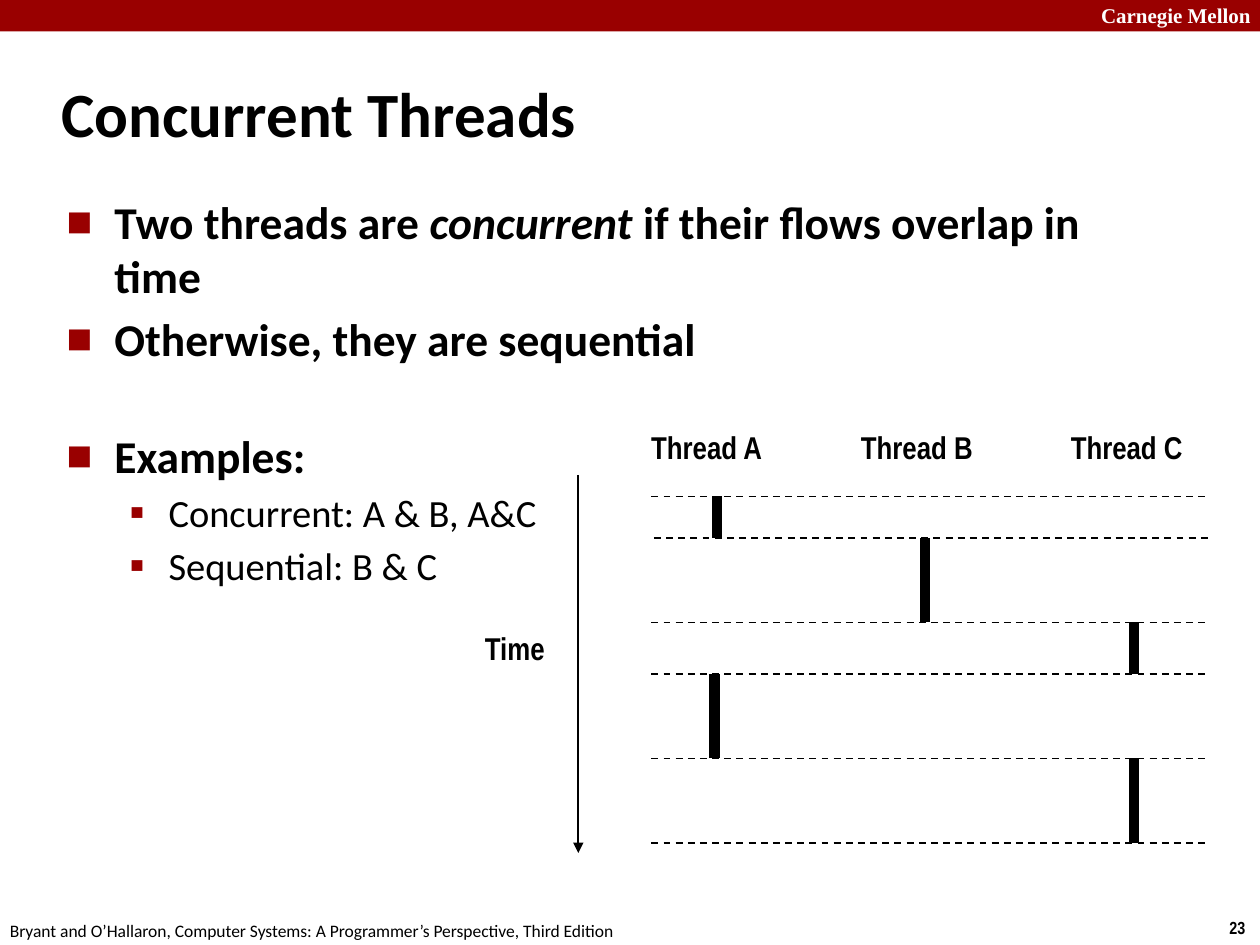
from lxml import etree
from pptx import Presentation
from pptx.dml.color import RGBColor
from pptx.enum.dml import MSO_LINE_DASH_STYLE as DASH
from pptx.enum.shapes import MSO_CONNECTOR, MSO_SHAPE
from pptx.enum.text import MSO_ANCHOR as ANCHOR
from pptx.oxml.ns import qn
from pptx.util import Inches, Pt

BLACK, WHITE, RED = "000000", "FFFFFF", "990000"


def color(hex_code):
    return RGBColor.from_string(hex_code)


def add_text(paragraph, text, *, font="Calibri", size=18, ink=BLACK, bold=False, italic=False):
    run = paragraph.add_run()
    run.text = text
    run.font.name, run.font.size = font, Pt(size)
    run.font.bold, run.font.italic = bold, italic
    run.font.color.rgb = color(ink)


def add_bullet(paragraph, symbol, percent, indent, hanging):
    props = paragraph._p.get_or_add_pPr()
    props.set("marL", str(Inches(indent)))
    props.set("indent", str(-Inches(hanging)))
    bullet_color = etree.SubElement(props, qn("a:buClr"))
    etree.SubElement(bullet_color, qn("a:srgbClr"), val=RED)
    etree.SubElement(props, qn("a:buSzPct"), val=str(percent * 1000))
    etree.SubElement(props, qn("a:buFont"), typeface="Calibri")
    etree.SubElement(props, qn("a:buChar"), char=symbol)


class SlideBuilder:
    label_style = dict(font="Arial Narrow", size=18, bold=True)

    def __init__(self, slide):
        self.shapes = slide.shapes

    def bar(self, left, top, width, height, fill):
        shape = self.shapes.add_shape(
            MSO_SHAPE.RECTANGLE, *map(Inches, (left, top, width, height)))
        shape.shadow.inherit = False
        shape.fill.solid()
        shape.fill.fore_color.rgb = color(fill)
        shape.line.fill.background()

    def frame(self, left, top, width, height, wrap=True, anchor=ANCHOR.TOP):
        box = self.shapes.add_textbox(*map(Inches, (left, top, width, height)))
        box.text_frame.word_wrap = wrap
        box.text_frame.vertical_anchor = anchor
        return box.text_frame

    def label(self, text, left, top, width, height, wrap=False, anchor=ANCHOR.TOP, **style):
        frame = self.frame(left, top, width, height, wrap, anchor)
        add_text(frame.paragraphs[0], text, **(style or self.label_style))

    def bullets(self, left, top, width, height, items):
        frame = self.frame(left, top, width, height)
        for number, (level, gap, runs) in enumerate(items):
            paragraph = frame.add_paragraph() if number else frame.paragraphs[0]
            paragraph.level = level
            paragraph.space_before = Pt(gap)
            if level:
                add_bullet(paragraph, "▪", 110, 0.81, 0.31)
            else:
                add_bullet(paragraph, "■", 60, 0.38, 0.38)
            for text, italic in runs:
                add_text(paragraph, text, size=22 if level else 26,
                         bold=level == 0, italic=italic)

    def line(self, x1, y1, x2, y2, width=1, dash=None, arrow=False):
        connector = self.shapes.add_connector(
            MSO_CONNECTOR.STRAIGHT, *map(Inches, (x1, y1, x2, y2)))
        connector.line.color.rgb = color(BLACK)
        connector.line.width = Pt(width)
        if dash:
            connector.line.dash_style = dash
        if arrow:
            etree.SubElement(connector.line._get_or_add_ln(), qn("a:tailEnd"), type="triangle")
        etree.SubElement(connector._element.spPr, qn("a:effectLst"))


def main():
    deck = Presentation()
    deck.slide_width, deck.slide_height = Inches(10), Inches(7.5)
    page = SlideBuilder(deck.slides.add_slide(deck.slide_layouts[6]))

    # Header and footer
    page.bar(0, 0, 10, 0.25, RED)
    page.label("Carnegie Mellon", 8.64, -0.03, 1.43, 0.3, wrap=True,
               font="Times New Roman", size=12, ink=WHITE, bold=True)
    page.label("23", 9.66, 7.23, 0.34, 0.27, font="Arial Narrow", size=10, bold=True)
    page.label("Bryant and O’Hallaron, Computer Systems: A Programmer’s Perspective, Third Edition",
               -0.02, 7.25, 5.08, 0.27, size=10)

    # Title and definitions
    page.label("Concurrent Threads", 0.39, 0.48, 8.3, 0.83, wrap=True,
               anchor=ANCHOR.MIDDLE, size=36, bold=True)
    page.bullets(0.43, 1.49, 8.64, 5.44, [
        (0, 0, [("Two threads are ", False), ("concurrent", True),
                (" if their flows overlap in time", False)]),
        (0, 4.5, [("Otherwise, they are sequential", False)]),
        (0, 35.5, [("Examples:", False)]),
        (1, 4, [("Concurrent: A & B, A&C", False)]),
        (1, 4, [("Sequential: B & C", False)]),
    ])

    # Time axis
    page.line(4.59, 3.77, 4.59, 6.77, arrow=True)
    page.label("Time", 3.75, 4.94, 0.68, 0.4)

    # Thread columns
    for column, thread in enumerate("ABC"):
        page.label(f"Thread {thread}", 5.07 + column * 1.665, 3.35, 1.1, 0.4)

    # Each thread runs between two neighbouring switches
    switches = [3.94, 4.27, 4.94, 5.35, 6.02, 6.69]
    running = [5.69, 7.34, 9, 5.67, 9]
    for x, start, end in zip(running, switches, switches[1:]):
        page.line(x, start, x, end, width=6)
    for y in switches:
        shift = 0.02 if y == 4.27 else 0
        page.line(5.17 + shift, y, 9.59 + shift, y, dash=DASH.DASH)

    deck.save("out.pptx")


if __name__ == "__main__":
    main()
